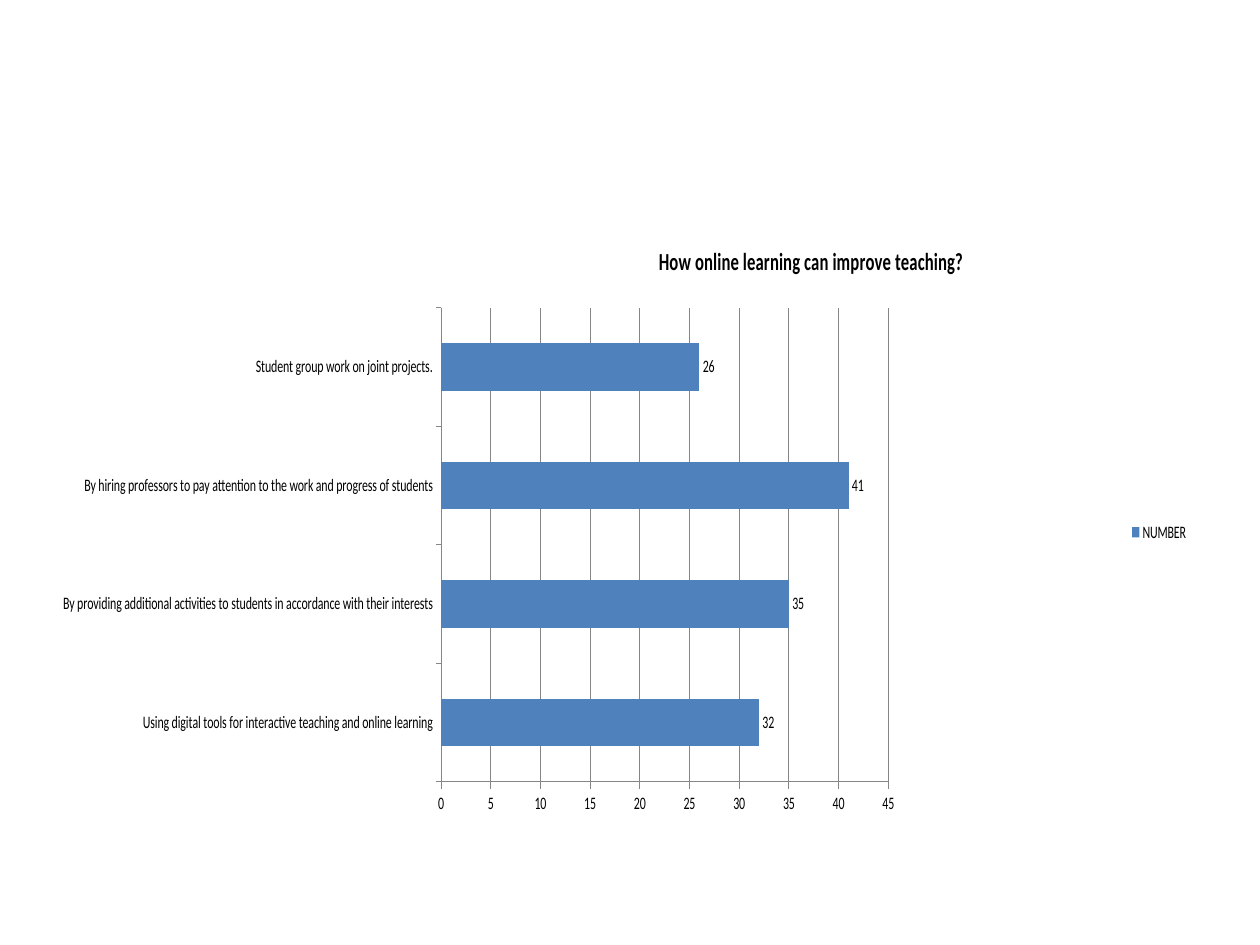
from typing import NamedTuple

from lxml.etree import SubElement
from pptx import Presentation
from pptx.chart.axis import _BaseAxis
from pptx.chart.chart import Chart
from pptx.chart.data import CategoryChartData
from pptx.dml.color import RGBColor
from pptx.enum.chart import XL_CHART_TYPE, XL_LABEL_POSITION, XL_LEGEND_POSITION, XL_TICK_MARK
from pptx.oxml.ns import qn
from pptx.util import Inches, Pt

COLORS = {"text": "000000", "bar": "4F81BD", "line": "868686"}
FONT = "Calibri"
TITLE = "How online learning can improve teaching?"


class Answer(NamedTuple):
    label: str
    count: int


class Area(NamedTuple):
    """Shares of the width and height of the surrounding frame."""
    x: float
    y: float
    w: float
    h: float


ANSWERS = [
    Answer("Using digital tools for interactive teaching and online learning", 32),
    Answer("By providing additional activities to students in accordance with their interests", 35),
    Answer("By hiring professors to pay attention to the work and progress of students", 41),
    Answer("Student group work on joint projects.", 26),
]
CHART_AREA = Area(0.05, 1.75 / 7.5, 0.9, 0.66)
PLOT_AREA = Area(0.02, 0.14, 0.58, 0.76)


def rgb(name: str) -> RGBColor:
    return RGBColor.from_string(COLORS[name])


def style_font(font, size: float, bold: bool = False) -> None:
    font.name, font.size, font.bold = FONT, Pt(size), bold
    font.color.rgb = rgb("text")


def style_line(line) -> None:
    line.color.rgb = rgb("line")
    line.width = Pt(0.75)


def style_axis(axis: _BaseAxis, gridlines: bool) -> None:
    axis.major_tick_mark = XL_TICK_MARK.OUTSIDE
    axis.minor_tick_mark = XL_TICK_MARK.NONE
    axis.has_major_gridlines = gridlines
    style_line(axis.format.line)
    if gridlines:
        style_line(axis.major_gridlines.format.line)


def place_plot(chart: Chart, area: Area) -> None:
    """Fix the inner plot area, leaving the axis labels outside it."""
    plot_area = chart.element.find(".//" + qn("c:plotArea"))
    layout = plot_area.find(qn("c:layout"))
    if layout is None:
        layout = SubElement(plot_area, qn("c:layout"))
        plot_area.insert(0, layout)
    manual = SubElement(layout, qn("c:manualLayout"))
    settings = {"layoutTarget": "inner", "xMode": "edge", "yMode": "edge", **area._asdict()}
    for tag, value in settings.items():
        SubElement(manual, qn(f"c:{tag}")).set("val", str(value))


def main() -> None:
    prs = Presentation()
    prs.slide_width, prs.slide_height = Inches(10), Inches(7.5)
    s = prs.slides.add_slide(prs.slide_layouts[6])

    data = CategoryChartData()
    data.categories = [answer.label for answer in ANSWERS]
    data.add_series("NUMBER", [answer.count for answer in ANSWERS])
    w, h = prs.slide_width, prs.slide_height
    chart = s.shapes.add_chart(
        XL_CHART_TYPE.BAR_CLUSTERED,
        int(CHART_AREA.x * w), int(CHART_AREA.y * h),
        int(CHART_AREA.w * w), int(CHART_AREA.h * h), data).chart
    style_font(chart.font, 10)

    tf = chart.chart_title.text_frame
    tf.text = TITLE
    style_font(tf.paragraphs[0].runs[0].font, 14, bold=True)
    chart.chart_title.include_in_layout = False

    chart.has_legend = True
    chart.legend.position = XL_LEGEND_POSITION.RIGHT
    chart.legend.include_in_layout = False

    style_axis(chart.category_axis, gridlines=False)
    style_axis(chart.value_axis, gridlines=True)

    plot = chart.plots[0]
    plot.gap_width = 150
    plot.vary_by_categories = False
    bars = plot.series[0]
    bars.format.fill.solid()
    bars.format.fill.fore_color.rgb = rgb("bar")
    labels = bars.data_labels
    labels.show_value = True
    labels.position = XL_LABEL_POSITION.OUTSIDE_END
    style_font(labels.font, 10)
    place_plot(chart, PLOT_AREA)

    prs.save("out.pptx")


if __name__ == "__main__":
    main()
